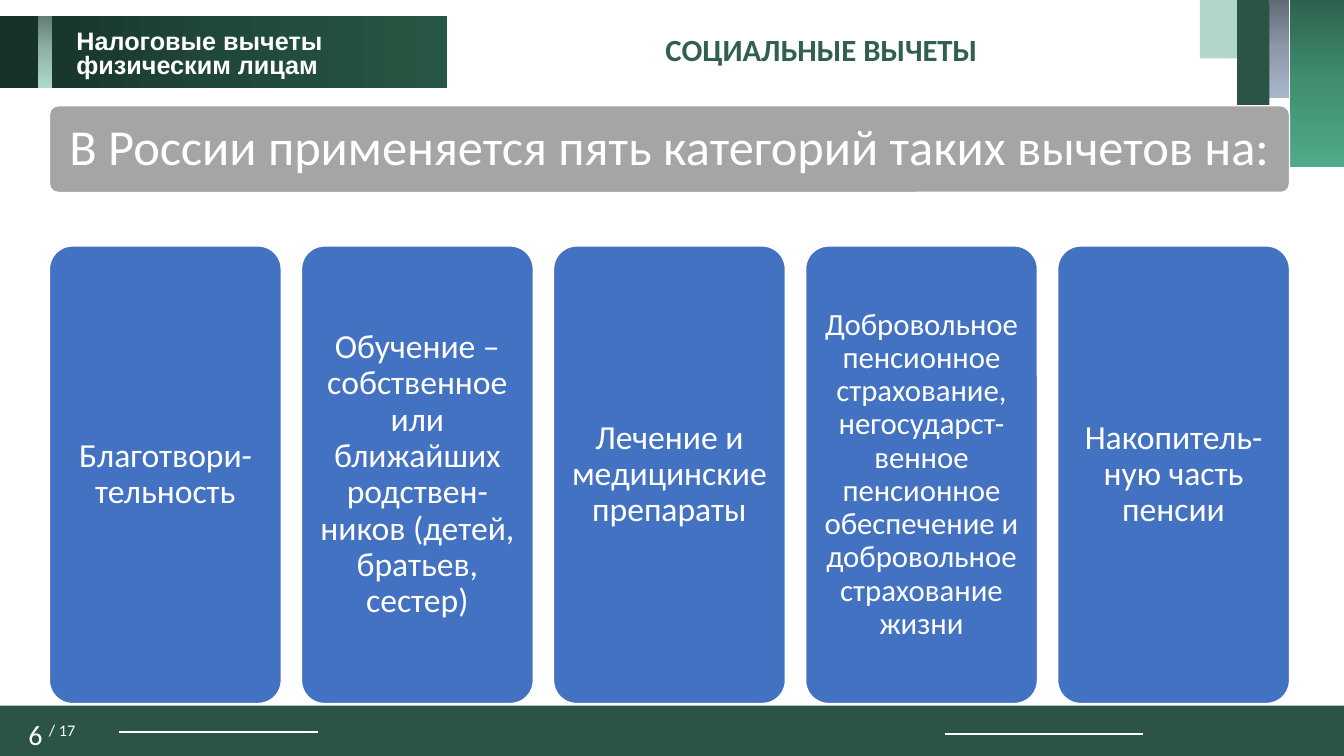
import copy

import pptx
import pptx.dml.color
import pptx.enum.shapes
import pptx.enum.text
import pptx.oxml
import pptx.oxml.ns
import pptx.util

RGB = pptx.dml.color.RGBColor
SHAPES = pptx.enum.shapes.MSO_SHAPE
ALIGN = pptx.enum.text.PP_ALIGN
ANCHOR = pptx.enum.text.MSO_ANCHOR
qn = pptx.oxml.ns.qn

WHITE = RGB(0xFF, 0xFF, 0xFF)
PINE = RGB(0x2B, 0x54, 0x44)
MINT = RGB(0xB1, 0xD7, 0xC9)
TITLE_GREEN = RGB(0x31, 0x61, 0x4E)
GREY = RGB(0xA5, 0xA5, 0xA5)
BLUE = RGB(0x43, 0x72, 0xC3)
STEEL_FADE = (RGB(0x61, 0x69, 0x75), RGB(0x8D, 0x98, 0xA9), RGB(0xA9, 0xB7, 0xCC))
EMERALD_FADE = (RGB(0x2D, 0x62, 0x4E), RGB(0x41, 0x8F, 0x71), RGB(0x4E, 0xAB, 0x88))
FOREST_FADE = (RGB(0x16, 0x31, 0x27), RGB(0x20, 0x48, 0x38), RGB(0x27, 0x57, 0x44))
SAGE_FADE = (RGB(0x64, 0x7D, 0x74), RGB(0x91, 0xB5, 0xA8), RGB(0xAE, 0xD9, 0xC9))

DEDUCTIONS = [
    ("Благотвори-тельность", 24),
    ("Обучение – собственное или ближайших родствен-ников (детей, братьев, сестер)", 24),
    ("Лечение и медицинские препараты", 24),
    ("Добровольное пенсионное страхование, негосударст-венное пенсионное "
     "обеспечение и добровольное страхование жизни", 22),
    ("Накопитель-ную часть пенсии", 24),
]
CARD_LEFT, CARD_PITCH = 49, 250


def px(length):
    return pptx.util.Emu(length * 9144)


class SlideBuilder:
    font = "Calibri"

    def __init__(self, width, height):
        self.deck = pptx.Presentation()
        self.deck.slide_width, self.deck.slide_height = px(width), px(height)
        self.slide = self.deck.slides.add_slide(self.deck.slide_layouts[6])

    def block(self, box, fill, kind=SHAPES.RECTANGLE):
        block = self.slide.shapes.add_shape(kind, *map(px, box))
        block.shadow.inherit = False
        block.line.fill.background()
        block.fill.solid()
        block.fill.fore_color.rgb = fill
        return block

    def fade(self, box, colors, angle):
        block = self.block(box, colors[0])
        block.fill.gradient()
        block.fill.gradient_angle = angle
        stop_list = next(block._element.spPr.iter(qn("a:gsLst")))
        stop_list.insert(1, copy.deepcopy(stop_list[0]))
        for stop, color, position in zip(block.fill.gradient_stops, colors, (0, 0.5, 1)):
            stop.color.rgb = color
            stop.position = position

    def rule(self, left, top, width):
        rule = self.slide.shapes.add_connector(
            pptx.enum.shapes.MSO_CONNECTOR.STRAIGHT, *map(px, (left, top, left + width, top)))
        rule.line.color.rgb = WHITE
        rule.line.width = pptx.util.Pt(1.5)
        rule._element.spPr.append(pptx.oxml.parse_xml(
            '<a:effectLst xmlns:a="http://schemas.openxmlformats.org/drawingml/2006/main"/>'))

    def fill_text(self, holder, lines, size, spacing=1.0, color=WHITE, font=font, bold=False,
                  align=ALIGN.LEFT, anchor=ANCHOR.TOP, inset=(10, 5)):
        frame = holder.text_frame
        side, edge = map(px, inset)
        frame_format = {"word_wrap": True, "vertical_anchor": anchor, "margin_left": side,
                        "margin_right": side, "margin_top": edge, "margin_bottom": edge}
        for name, value in frame_format.items():
            setattr(frame, name, value)
        paragraph = frame.paragraphs[0]
        paragraph.alignment = align
        paragraph.line_spacing = spacing
        for index, line in enumerate(lines):
            if index:
                paragraph.add_line_break()
            self.run(paragraph, line, size, color, font, bold)
        return paragraph

    def run(self, paragraph, words, size, color=WHITE, font=font, bold=False):
        run = paragraph.add_run()
        run.text = words
        for name, value in {"size": pptx.util.Pt(size), "name": font, "bold": bold}.items():
            setattr(run.font, name, value)
        run.font.color.rgb = color
        return run

    def label(self, box, lines, size, **text_format):
        holder = self.slide.shapes.add_textbox(*map(px, box))
        return self.fill_text(holder, lines, size, **text_format)

    def card(self, box, fill, words, size):
        card = self.block(box, fill, SHAPES.ROUNDED_RECTANGLE)
        card.adjustments[0] = 0.1
        card.line.color.rgb = WHITE
        card.line.width = pptx.util.Pt(1)
        self.fill_text(card, [words], size, spacing=0.9, align=ALIGN.CENTER,
                       anchor=ANCHOR.MIDDLE, inset=(10, 10))


def main():
    page = SlideBuilder(1333, 750)

    page.block((0, 700, 1333, 52), PINE)
    page.rule(118, 726, 197)
    page.rule(937, 728, 197)
    page_number = page.label((-3, 713, 109, 38), ["6 "], 20, spacing=0.8, align=ALIGN.CENTER)
    total = page.run(page_number, "/ 17", 20)
    total.font._element.set("baseline", "30000")

    page.fade((1259, -1, 20, 98), STEEL_FADE, 270)
    page.fade((1279, -1, 56, 167), EMERALD_FADE, 270)
    page.block((1190, -1, 38, 59), MINT)
    page.block((1227, -1, 32, 128), PINE)

    page.fade((0, 16, 443, 71), FOREST_FADE, 0)
    page.fade((38, 16, 14, 71), SAGE_FADE, 270)
    page.label((66, 26, 274, 59), ["Налоговые вычеты ", "физическим лицам"], 18,
               spacing=0.8, font="Arial", bold=True)
    page.label((650, 26, 334, 47), ["СОЦИАЛЬНЫЕ ВЫЧЕТЫ"], 22, color=TITLE_GREEN, bold=True)

    page.card((49, 105, 1230, 86), GREY,
              "В России применяется пять категорий таких вычетов на:", 36)
    for index, (deduction, size) in enumerate(DEDUCTIONS):
        page.card((CARD_LEFT + index * CARD_PITCH, 244, 230, 454), BLUE, deduction, size)

    page.deck.save("out.pptx")


if __name__ == "__main__":
    main()
